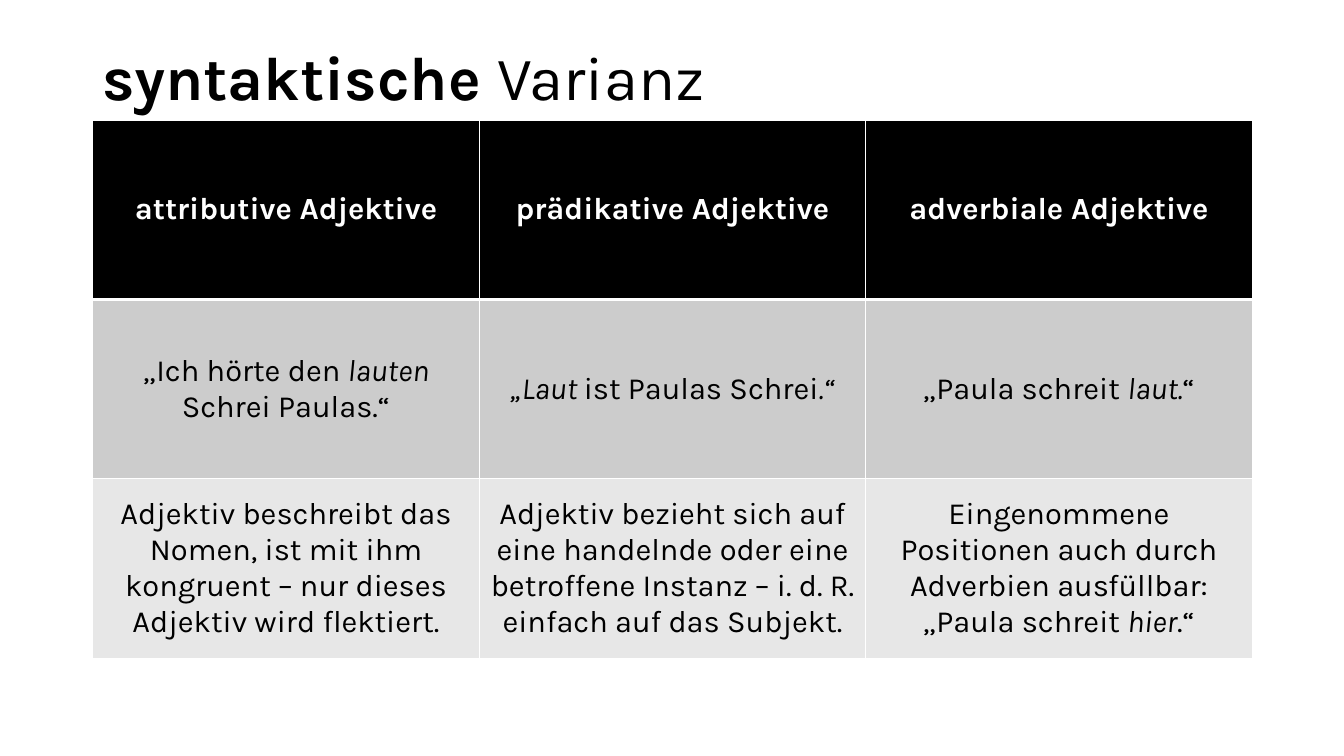
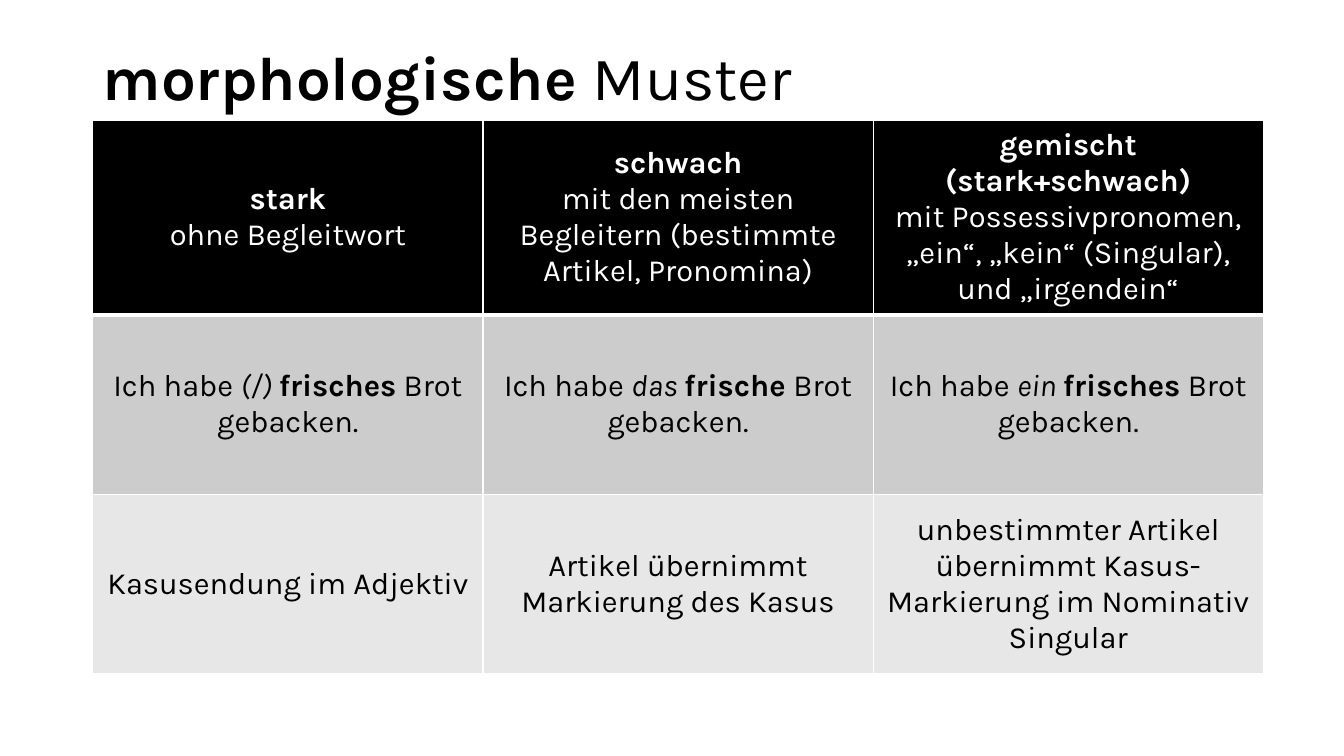
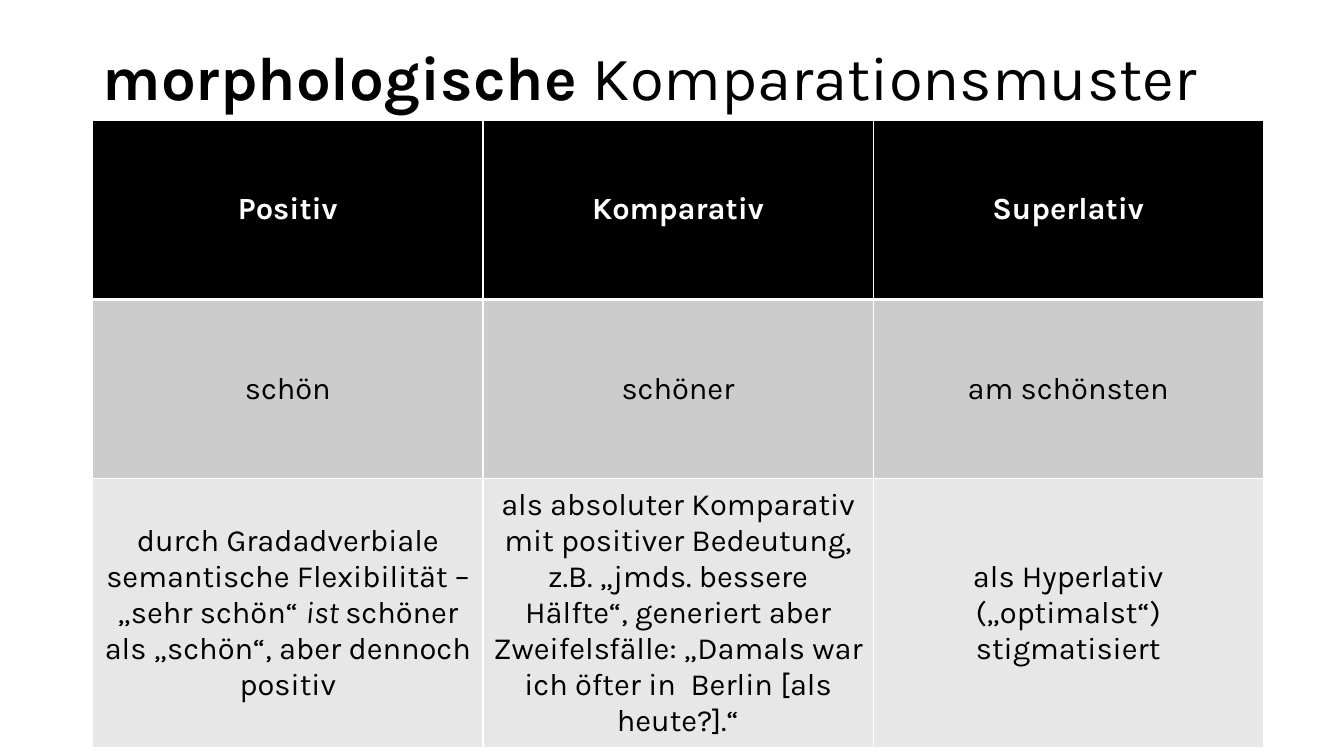
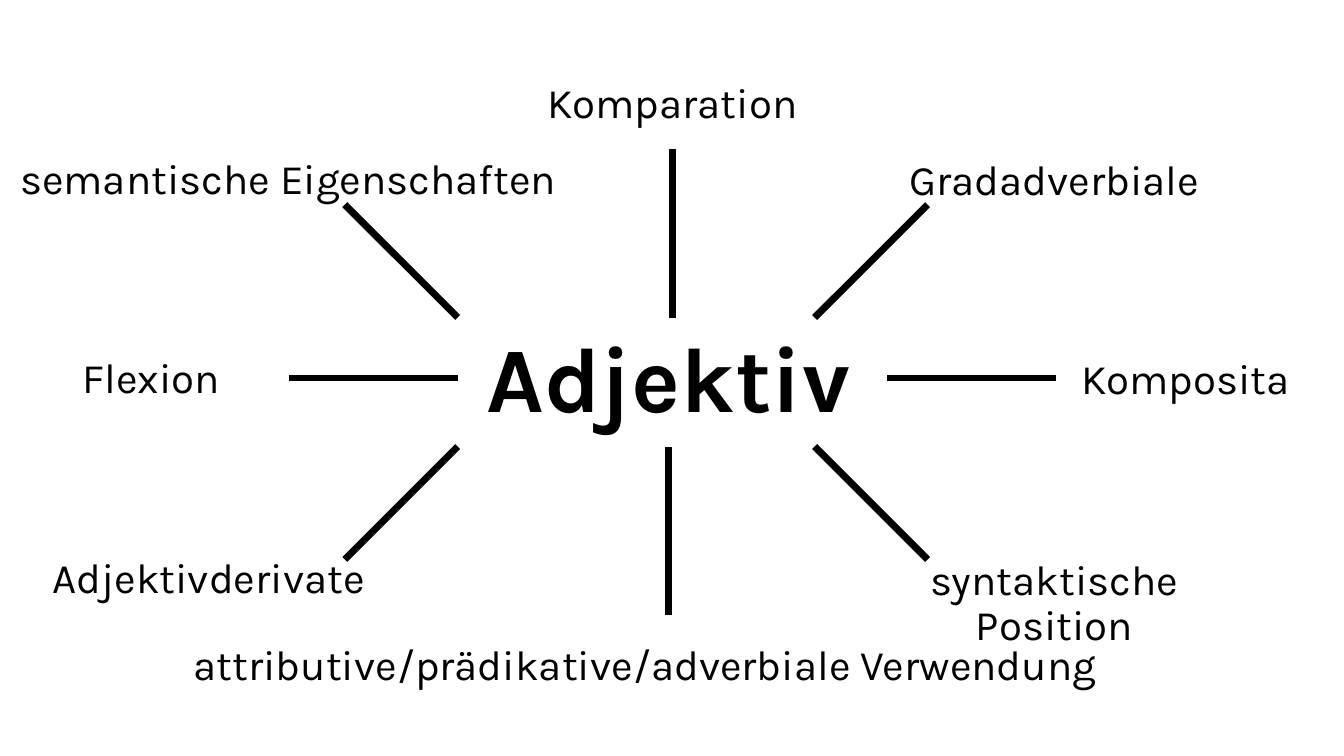
import dataclasses

import lxml.etree
import pptx
import pptx.dml.color
import pptx.enum.shapes
import pptx.enum.text
import pptx.oxml.ns
import pptx.util

# In all wording, * switches bold and _ switches italics.
TABLES = [
    {
        "title": "*syntaktische *Varianz",
        "width": 11.5,
        "rows": [
            ["*attributive Adjektive*", "*prädikative Adjektive*", "*adverbiale Adjektive*"],
            [
                "„Ich hörte den _lauten_ Schrei Paulas.“",
                "_„Laut _ist Paulas Schrei_.“_",
                "„Paula schreit _laut._“",
            ],
            [
                "Adjektiv beschreibt das Nomen, ist mit ihm kongruent – "
                "nur dieses Adjektiv wird flektiert.",
                "Adjektiv bezieht sich auf eine handelnde oder eine betroffene "
                "Instanz – i. d. R. einfach auf das Subjekt.",
                "Eingenommene Positionen auch durch Adverbien ausfüllbar:\n"
                "„Paula schreit _hier_.“",
            ],
        ],
    },
    {
        "title": "*morphologische *Muster",
        "width": 11.61,
        "rows": [
            [
                "*stark*\nohne Begleitwort",
                "*schwach*\nmit den meisten Begleitern (bestimmte Artikel, Pronomina)",
                "*gemischt (stark+schwach)*\nmit Possessivpronomen, „ein“, „kein“ "
                "(Singular), und „irgendein“",
            ],
            [
                "Ich habe _(/) _*frisches* Brot gebacken.",
                "Ich habe _das _*frische *Brot gebacken.",
                "Ich habe _ein _*frisches* Brot gebacken.",
            ],
            [
                "Kasusendung im Adjektiv",
                "Artikel übernimmt Markierung des Kasus",
                "unbestimmter Artikel übernimmt Kasus-Markierung im Nominativ Singular",
            ],
        ],
    },
    {
        "title": "*morphologische *Komparationsmuster",
        "width": 11.61,
        "rows": [
            ["*Positiv*", "*Komparativ*", "*Superlativ*"],
            ["schön", "schöner", "am schönsten"],
            [
                "durch Gradadverbiale semantische Flexibilität – „sehr schön“ "
                "_ist _schöner als „schön“, aber dennoch positiv",
                "als absoluter Komparativ mit positiver Bedeutung, z.B. „jmds. bessere "
                "Hälfte“, generiert aber Zweifelsfälle: „Damals war ich öfter in  Berlin "
                "[als heute?].“",
                "als Hyperlativ („optimalst“)\nstigmatisiert",
            ],
        ],
    },
]

HUB = "*Adjektiv*"
# Wording, centre and top and width of the label, inner end and direction of the spoke
BRANCHES = [
    ("Komparation", 6.67, 0.77, 4.26, (6.67, 3.15), (0, -1)),
    ("Gradadverbiale", 10.46, 1.53, 4.26, (8.08, 3.15), (1, -1)),
    ("Komposita", 11.76, 3.51, 3, (8.8, 3.75), (1, 0)),
    ("syntaktische Position", 10.46, 5.5, 4.26, (8.08, 4.43), (1, 1)),
    ("attributive/prädikative/adverbiale Verwendung", 6.4, 6.34, 10.02, (6.63, 4.43), (0, 1)),
    ("Adjektivderivate", 2.07, 5.48, 4, (4.54, 4.43), (-1, 1)),
    ("Flexion", 1.5, 3.5, 3, (4.54, 3.75), (-1, 0)),
    ("semantische Eigenschaften", 2.86, 1.52, 5.57, (4.54, 3.15), (-1, -1)),
]
STRAIGHT, DIAGONAL = 1.67, 1.12  # reach of a spoke along each axis


@dataclasses.dataclass(frozen=True)
class Theme:
    font: str = "Karla"
    ink: str = "000000"
    paper: str = "FFFFFF"
    row_fills: tuple = ("000000", "CCCCCC", "E7E7E7")
    row_inks: tuple = ("FFFFFF", "000000", "000000")
    title: int = 44
    hub: int = 66
    branch: int = 30
    cell: int = 22
    grid_line: int = 1
    header_line: int = 3
    spoke_line: int = 5


THEME = Theme()
SLIDE_WIDTH, SLIDE_HEIGHT = 13.33, 7.5
MARGIN, TITLE_TOP, TITLE_HEIGHT = 0.92, 0.4, 0.79
TITLE_WIDTH = 11.5
ROW_HEIGHT = 1.78

inches = pptx.util.Inches
CENTER = pptx.enum.text.PP_ALIGN.CENTER
LEFT = pptx.enum.text.PP_ALIGN.LEFT
MIDDLE = pptx.enum.text.MSO_ANCHOR.MIDDLE
TOP = pptx.enum.text.MSO_ANCHOR.TOP


def rgb(code):
    return pptx.dml.color.RGBColor.from_string(code)


def styled_pieces(wording):
    """Yield (text, bold, italic) for each stretch between style marks or line breaks."""
    text, bold, italic = "", False, False
    for letter in wording:
        if letter not in "*_\n":
            text += letter
            continue
        if text:
            yield text, bold, italic
        text = ""
        if letter == "\n":
            yield letter, bold, italic
        bold ^= letter == "*"
        italic ^= letter == "_"
    if text:
        yield text, bold, italic


def write(paragraph, wording, size, color=THEME.ink, align=CENTER):
    paragraph.alignment = align
    for text, bold, italic in styled_pieces(wording):
        if text == "\n":
            paragraph.add_line_break()
            continue
        run = paragraph.add_run()
        run.text = text
        font = run.font
        font.name, font.size = THEME.font, pptx.util.Pt(size)
        font.bold, font.italic = bold, italic
        font.color.rgb = rgb(color)


def add_label(slide, wording, box, size, align=CENTER, anchor=TOP, space_before=0):
    frame = slide.shapes.add_textbox(*map(inches, box)).text_frame
    frame.word_wrap = True
    frame.vertical_anchor = anchor
    paragraph = frame.paragraphs[0]
    paragraph.line_spacing = 0.9
    paragraph.space_before = pptx.util.Pt(space_before)
    write(paragraph, wording, size, align=align)


def set_borders(cell, widths):
    properties = cell._tc.get_or_add_tcPr()
    for place, (side, width) in enumerate(widths.items()):
        line = lxml.etree.Element(
            pptx.oxml.ns.qn(f"a:ln{side}"), w=str(pptx.util.Pt(width))
        )
        fill = lxml.etree.SubElement(line, pptx.oxml.ns.qn("a:solidFill"))
        lxml.etree.SubElement(fill, pptx.oxml.ns.qn("a:srgbClr"), val=THEME.paper)
        properties.insert(place, line)


def add_grid(slide, rows, width):
    columns = len(rows[0])
    table = slide.shapes.add_table(
        len(rows), columns, inches(MARGIN), inches(TITLE_TOP + TITLE_HEIGHT),
        inches(width), inches(ROW_HEIGHT * len(rows)),
    ).table
    for column in table.columns:
        column.width = inches(width / columns)
    for r, row in enumerate(rows):
        table.rows[r].height = inches(ROW_HEIGHT)
        above = THEME.header_line if r == 1 else THEME.grid_line
        below = THEME.header_line if r == 0 else THEME.grid_line
        for c, wording in enumerate(row):
            cell = table.cell(r, c)
            cell.vertical_anchor = MIDDLE
            cell.fill.solid()
            cell.fill.fore_color.rgb = rgb(THEME.row_fills[r])
            set_borders(
                cell, {"L": THEME.grid_line, "R": THEME.grid_line, "T": above, "B": below}
            )
            write(cell.text_frame.paragraphs[0], wording, THEME.cell, THEME.row_inks[r])


def add_spoke(slide, inner, direction):
    reach = DIAGONAL if all(direction) else STRAIGHT
    outer = [start + reach * step for start, step in zip(inner, direction)]
    spoke = slide.shapes.add_connector(
        pptx.enum.shapes.MSO_CONNECTOR.STRAIGHT, *map(inches, (*outer, *inner))
    )
    spoke.line.color.rgb = rgb(THEME.ink)
    spoke.line.width = pptx.util.Pt(THEME.spoke_line)
    lxml.etree.SubElement(spoke._element.spPr, pptx.oxml.ns.qn("a:effectLst"))


def add_table_slide(slide, title, width, rows):
    box = (MARGIN, TITLE_TOP, TITLE_WIDTH, TITLE_HEIGHT)
    add_label(slide, title, box, THEME.title, LEFT, MIDDLE)
    add_grid(slide, rows, width)


def add_mind_map(slide):
    add_label(slide, HUB, (4.2, 3.4, 4.86, TITLE_HEIGHT), THEME.hub, anchor=MIDDLE)
    for wording, center, top, width, inner, direction in BRANCHES:
        add_spoke(slide, inner, direction)
        box = (center - width / 2, top, width, 0.56)
        add_label(slide, wording, box, THEME.branch, space_before=10)


def main():
    deck = pptx.Presentation()
    deck.slide_width, deck.slide_height = inches(SLIDE_WIDTH), inches(SLIDE_HEIGHT)
    blank = deck.slide_layouts[6]
    for content in TABLES:
        add_table_slide(deck.slides.add_slide(blank), **content)
    add_mind_map(deck.slides.add_slide(blank))
    deck.save("out.pptx")


if __name__ == "__main__":
    main()
